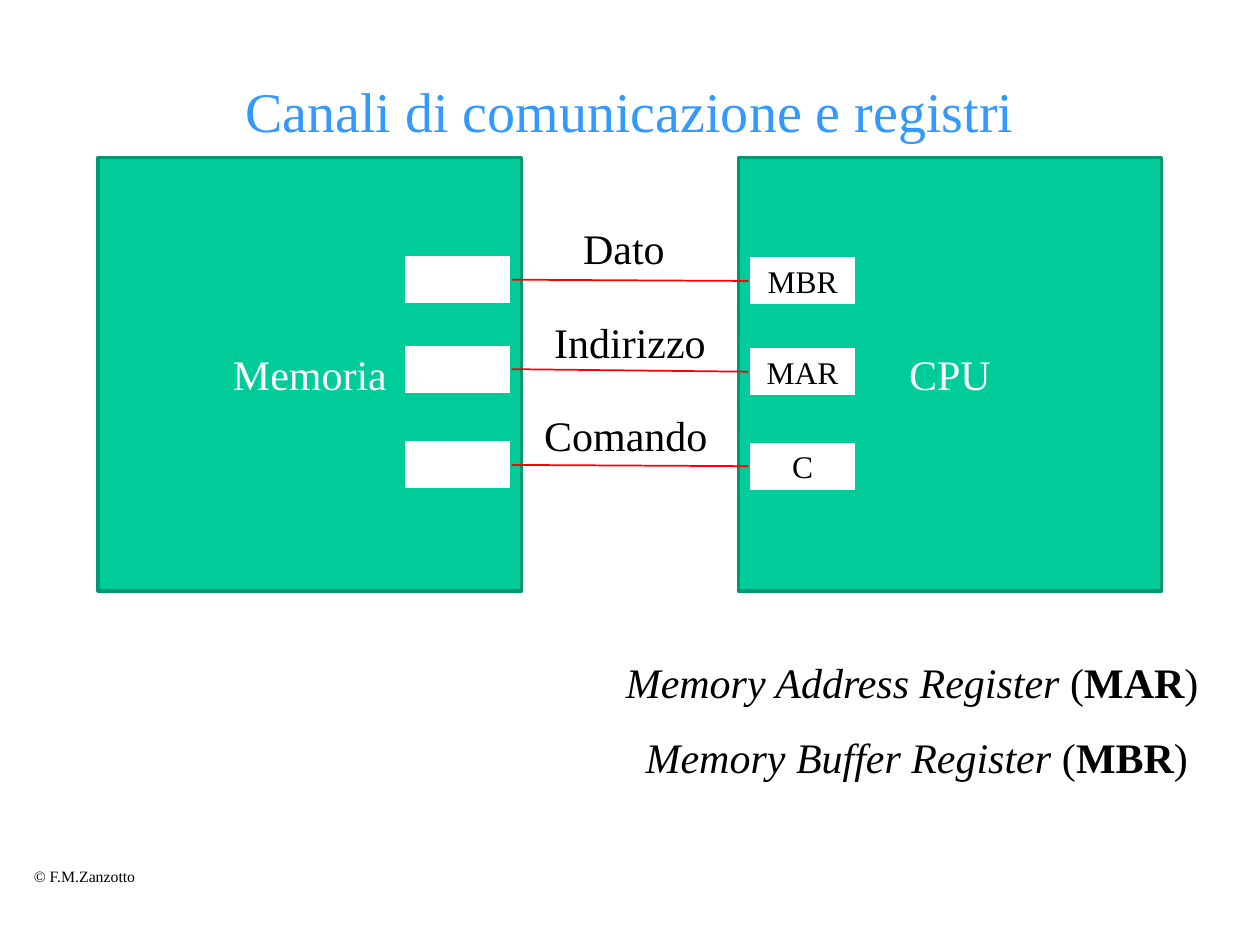
"""Build a slide on the channels and registers between memory and CPU."""
from lxml import etree
from pptx import Presentation
from pptx.dml.color import RGBColor
from pptx.enum.shapes import MSO_CONNECTOR, MSO_SHAPE
from pptx.enum.text import MSO_ANCHOR, PP_ALIGN
from pptx.oxml.ns import qn
from pptx.util import Inches, Pt

RECT = MSO_SHAPE.RECTANGLE
LINE = MSO_CONNECTOR.STRAIGHT
TOP, MIDDLE = MSO_ANCHOR.TOP, MSO_ANCHOR.MIDDLE
LEFT, CENTER, RIGHT = PP_ALIGN.LEFT, PP_ALIGN.CENTER, PP_ALIGN.RIGHT

FONT = "Times New Roman"
BLACK = RGBColor(0x00, 0x00, 0x00)
WHITE = RGBColor(0xFF, 0xFF, 0xFF)
BLUE = RGBColor(0x33, 0x99, 0xFF)
GREEN = RGBColor(0x00, 0xCC, 0x99)
EDGE = RGBColor(0x00, 0x97, 0x71)
RED = RGBColor(0xFF, 0x00, 0x00)

UNITS = [("Memoria", 0.78), ("CPU", 5.86)]
CHANNELS = [
    ("Dato", 4.53, 1.72, 0.86, "MBR", 2.02, 2.03),
    ("Indirizzo", 4.3, 2.46, 1.41, "MAR", 2.73, 2.75),
    ("Comando", 4.22, 3.2, 1.51, "C", 3.49, 3.5),
]
TERMS = [
    ("Memory Address Register", "MAR", ")"),
    ("Memory Buffer Register", "MBR", ") "),
]


def style(run, size, color):
    """Set the font, size and colour of a run."""
    run.font.name = FONT
    run.font.size = Pt(size)
    run.font.color.rgb = color


def write(frame, text, size, color, align=LEFT, anchor=TOP):
    """Put one styled paragraph in a text frame."""
    frame.text = text
    frame.vertical_anchor = anchor
    para = frame.paragraphs[0]
    para.alignment = align
    for run in para.runs:
        style(run, size, color)


def add_box(slide, left, top, width, height, fill, edge):
    """Add a filled rectangle with an outline."""
    box = slide.shapes.add_shape(
        RECT, Inches(left), Inches(top), Inches(width), Inches(height))
    box.shadow.inherit = False
    box.fill.solid()
    box.fill.fore_color.rgb = fill
    box.line.color.rgb = edge
    box.line.width = Pt(2)
    return box


def add_text(slide, left, top, width, height, wrap=False):
    """Add a text box and return its frame."""
    box = slide.shapes.add_textbox(
        Inches(left), Inches(top), Inches(width), Inches(height))
    box.text_frame.word_wrap = wrap
    return box.text_frame


def add_cell(slide, left, top, name=""):
    """Add a register with an optional name."""
    cell = add_box(slide, left, top, 0.86, 0.4, WHITE, GREEN)
    if name:
        write(cell.text_frame, name, 18, BLACK, CENTER)
    return cell


def add_link(slide, start, end):
    """Join two registers with a red line."""
    link = slide.shapes.add_connector(LINE, 0, 0, 0, 0)
    link.begin_connect(start, 3)
    link.end_connect(end, 1)
    link.line.color.rgb = RED
    link.line.width = Pt(1)
    etree.SubElement(link._element.spPr, qn("a:effectLst"))


def add_terms(slide):
    """Add the full names of the registers."""
    frame = add_text(slide, 4.14, 5.16, 5.47, 1.11, wrap=True)
    for i, (name, short, close) in enumerate(TERMS):
        para = frame.add_paragraph() if i else frame.paragraphs[0]
        para.alignment = RIGHT
        para.level = 1
        if i:
            para.space_before = Pt(14)
        for text in (name, " (", short, close):
            run = para.add_run()
            run.text = text
            style(run, 24, BLACK)
            run.font.italic = text == name
            run.font.bold = text == short


def main():
    """Build and save the slide."""
    deck = Presentation()
    deck.slide_width, deck.slide_height = Inches(10), Inches(7.5)
    slide = deck.slides.add_slide(deck.slide_layouts[6])
    write(add_text(slide, 0.17, 6.83, 1.02, 0.25),
          "© F.M.Zanzotto", 9, BLACK)
    write(add_text(slide, 0.75, 0.5, 8.5, 0.75, wrap=True),
          "Canali di comunicazione e registri", 32, BLUE, CENTER, MIDDLE)
    for name, left in UNITS:
        unit = add_box(slide, left, 1.25, 3.36, 3.44, GREEN, EDGE)
        write(unit.text_frame, name, 24, WHITE, CENTER, MIDDLE)
    for label, left, top, width, name, start, end in CHANNELS:
        write(add_text(slide, left, top, width, 0.51), label, 24, BLACK)
        add_link(slide, add_cell(slide, 3.2, start),
                 add_cell(slide, 5.94, end, name))
    add_terms(slide)
    deck.save("out.pptx")


if __name__ == "__main__":
    main()
